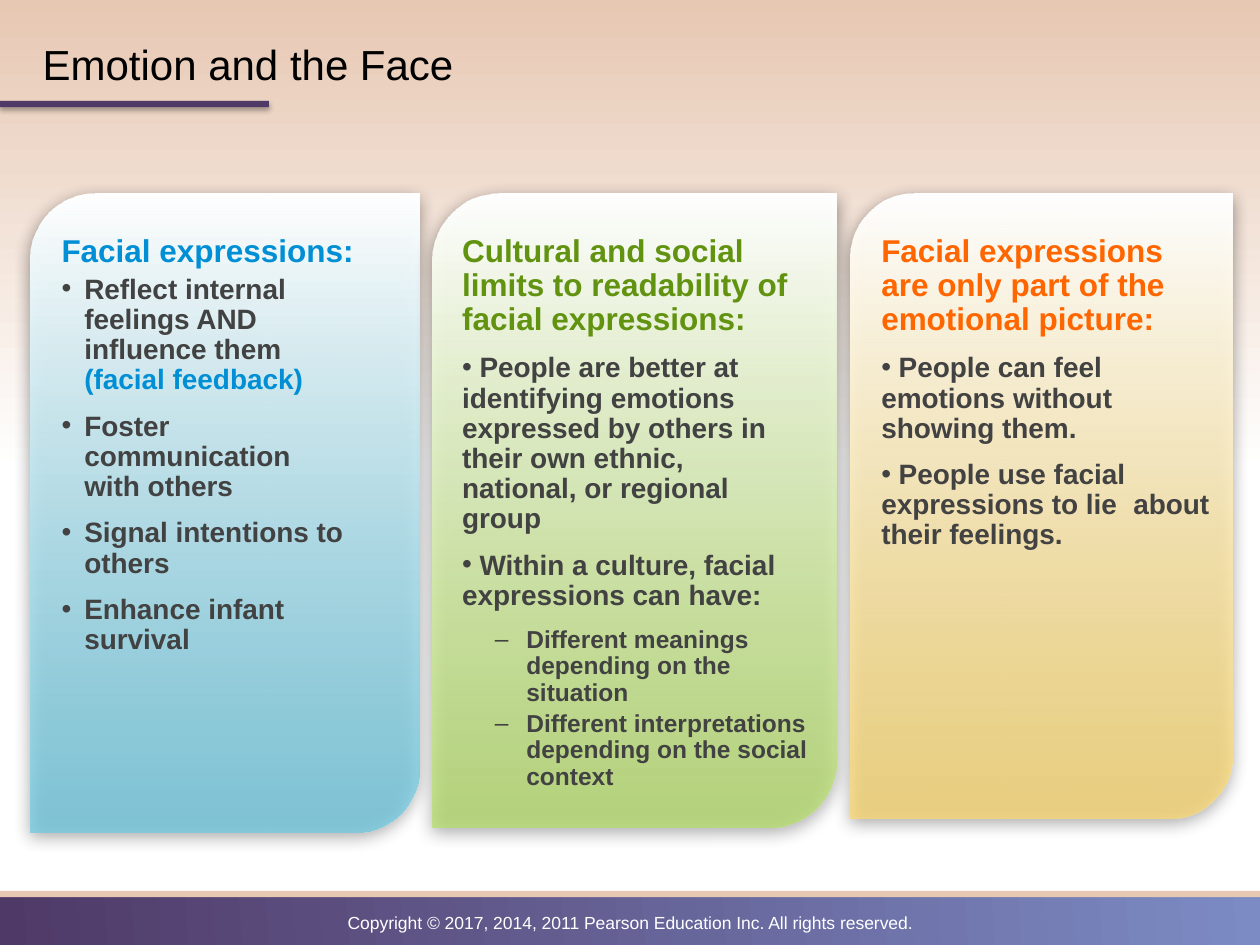
import lxml.etree
import pptx
import pptx.dml.color
import pptx.enum.shapes
import pptx.enum.text
import pptx.oxml.ns
import pptx.util

Pt = pptx.util.Pt
qn = pptx.oxml.ns.qn
SHAPES = pptx.enum.shapes.MSO_SHAPE
ALIGN = pptx.enum.text.PP_ALIGN
ANCHOR = pptx.enum.text.MSO_ANCHOR
GREY, PURPLE, SAND, WHITE, BLUE = "424242", "4F3967", "E7C8B3", "FFFFFF", "008FD4"
TABS = (8.64, 63.36)

STYLES = {
    "heading": {"size": 18, "after": 6, "tabs": TABS},
    "tight heading": {"size": 18},
    "bullet": {"size": 16, "after": 6, "bullet": "•", "tabs": TABS},
    "hanging bullet": {"size": 16, "after": 6, "bullet": "•", "margin": 13, "level": 1},
    "dash": {"size": 14, "bullet": "–", "margin": 36.7, "hang": 18, "level": 1, "tabs": TABS},
}

PANELS = [
    {
        "box": (17.3, 110.6, 222.2, 365), "text_box": (10.8, 20.4, 196.6, 316.8), "color": "6ECBE3", "opacity": 73,
        "paragraphs": [
            ("tight heading", [("Facial expressions:", BLUE)]),
            ("hanging bullet", [("Reflect internal feelings AND influence them\n", GREY), ("(facial feedback)", BLUE)]),
            ("hanging bullet", [("Foster communication\nwith others", GREY)]),
            ("hanging bullet", [("Signal intentions to others", GREY)]),
            ("hanging bullet", [("Enhance infant survival", GREY)]),
        ],
    },
    {
        "box": (247, 110.6, 231.2, 362.4), "text_box": (10, 20.4, 218.2, 353.5), "color": "B7E16A", "opacity": 72,
        "paragraphs": [
            ("heading", [("Cultural and social limits to readability of facial expressions:", "619311")]),
            ("bullet", [(" People are better at \tidentifying emotions \texpressed by others in "
                         "\ttheir own ethnic, \tnational, or regional \tgroup", GREY)]),
            ("bullet", [(" Within a culture, facial\texpressions can have:", GREY)]),
            ("dash", [("Different meanings depending on the situation", GREY)]),
            ("dash", [("Different interpretations depending on the social context", GREY)]),
        ],
    },
    {
        "box": (486, 110.6, 218.5, 357.2), "text_box": (10.5, 20.4, 206, 229.7), "color": "FFDA6E", "opacity": 72,
        "paragraphs": [
            ("heading", [("Facial expressions are only part of the emotional picture:", "FF6600")]),
            ("bullet", [(" People can feel \temotions without \tshowing them.", GREY)]),
            ("bullet", [(" People use facial \texpressions to lie \tabout their feelings.", GREY)]),
        ],
    },
]


def rgb(value):
    """Return the colour for a hex string."""
    return pptx.dml.color.RGBColor.from_string(value)


def apply_format(target, values):
    """Set each attribute of the target from a dict."""
    for name, value in values.items():
        setattr(target, name, value)


def add_element(parent, tag, **attributes):
    """Append an element to the parent and return it."""
    return lxml.etree.SubElement(parent, qn(tag), {name: str(value) for name, value in attributes.items()})


def add_color(parent, value, opacity=100):
    """Append a colour, with its opacity in percent."""
    color = add_element(parent, "a:srgbClr", val=value)
    if opacity < 100:
        add_element(color, "a:alpha", val=opacity * 1000)


def set_gradient(owner, fill, stops, angle):
    """Give the owner a linear gradient of (position, colour, opacity) stops."""
    fill.gradient()
    gradient = next(owner.element.iter(qn("a:gradFill")))
    for child in list(gradient):
        gradient.remove(child)
    stop_list = add_element(gradient, "a:gsLst")
    for position, value, opacity in stops:
        add_color(add_element(stop_list, "a:gs", pos=position * 1000), value, opacity)
    add_element(gradient, "a:lin", ang=angle * 60000, scaled=0)


def add_plain_shape(slide, kind, box, fill=None):
    """Add a shape without outline or shadow."""
    shape = slide.shapes.add_shape(kind, *map(Pt, box))
    shape.shadow.inherit = False
    shape.line.fill.background()
    if fill:
        shape.fill.solid()
        shape.fill.fore_color.rgb = rgb(fill)
    else:
        shape.fill.background()
    return shape


def add_shadow(shape, opacity, blur, distance):
    """Cast a black shadow below the shape."""
    effects = shape.element.spPr.find(qn("a:effectLst"))
    shadow = add_element(effects, "a:outerShdw", blurRad=Pt(blur), dist=Pt(distance),
                         dir=5400000, algn="t", rotWithShape=0)
    add_color(shadow, "000000", opacity)


def add_run(paragraph, text, size, color, bold=False):
    """Add text, turning newlines into line breaks."""
    for index, line in enumerate(text.split("\n")):
        if index:
            paragraph.add_line_break()
        if line:
            run = paragraph.add_run()
            run.text = line
            apply_format(run.font, {"name": "Arial", "size": Pt(size), "bold": bold})
            run.font.color.rgb = rgb(color)


def add_label(slide, box, text, size, color, alignment):
    """Add a one-line text box centred vertically."""
    frame = slide.shapes.add_textbox(*map(Pt, box)).text_frame
    apply_format(frame, {"word_wrap": True, "vertical_anchor": ANCHOR.MIDDLE})
    frame.paragraphs[0].alignment = alignment
    add_run(frame.paragraphs[0], text, size, color)


def format_paragraph(paragraph, style, first):
    """Apply bullet, tabs, indents and spacing of a style."""
    properties = paragraph._p.get_or_add_pPr()
    margin = style.get("margin", 0)
    properties.set("marL", str(Pt(margin)))
    properties.set("indent", str(-Pt(style.get("hang", margin))))
    if "bullet" in style:
        add_element(properties, "a:buFont", typeface="Arial")
        add_element(properties, "a:buChar", char=style["bullet"])
    else:
        add_element(properties, "a:buNone")
    if "tabs" in style:
        tab_list = add_element(properties, "a:tabLst")
        for position in style["tabs"]:
            add_element(tab_list, "a:tab", pos=Pt(position), algn="l")
    apply_format(paragraph, {
        "level": style.get("level", 0), "alignment": ALIGN.LEFT, "line_spacing": 0.9,
        "space_before": Pt(0 if first else 0.2 * style["size"]), "space_after": Pt(style.get("after", 0)),
    })


def add_panel(slide, box, text_box, color, opacity, paragraphs):
    """Add a gradient panel with its text placed relative to it."""
    panel = add_plain_shape(slide, SHAPES.ROUND_2_DIAG_RECTANGLE, box)
    set_gradient(panel, panel.fill, [(0, WHITE, 100), (100, color, opacity)], 90)
    add_shadow(panel, 43, 10, 3)
    left, top, width, height = text_box
    holder = add_plain_shape(slide, SHAPES.ROUNDED_RECTANGLE, (box[0] + left, box[1] + top, width, height))
    holder.adjustments[0] = 0
    frame = holder.text_frame
    apply_format(frame, {"word_wrap": True, "vertical_anchor": ANCHOR.TOP})
    for index, (style_name, runs) in enumerate(paragraphs):
        paragraph = frame.add_paragraph() if index else frame.paragraphs[0]
        style = STYLES[style_name]
        format_paragraph(paragraph, style, index == 0)
        for text, text_color in runs:
            add_run(paragraph, text, style["size"], text_color, True)


def add_header(slide, left, top):
    """Add the title and the bar below it."""
    bar = add_plain_shape(slide, SHAPES.RECTANGLE, (left, top + 57.6, 153.6, 3.6), PURPLE)
    add_shadow(bar, 35, 3.1, 1.8)
    add_label(slide, (left + 17.3, top + 15.1, 612, 42.5), "Emotion and the Face", 24, "000000", ALIGN.LEFT)


def add_footer(slide, left, top, width, height):
    """Add the footer band with the copyright line."""
    band = add_plain_shape(slide, SHAPES.RECTANGLE, (left, top, width, height))
    set_gradient(band, band.fill, [(0, PURPLE, 100), (100, "7C8BC4", 100)], 356)
    add_plain_shape(slide, SHAPES.RECTANGLE, (left, top - 0.9, width, 3.6), SAND)
    add_label(slide, (left, top + 7.2, width, 19.4),
              "Copyright © 2017, 2014, 2011 Pearson Education Inc. All rights reserved.", 10, WHITE, ALIGN.CENTER)


def main():
    """Build and save the slide."""
    presentation = pptx.Presentation()
    apply_format(presentation, {"slide_width": Pt(720), "slide_height": Pt(540)})
    slide = presentation.slides.add_slide(presentation.slide_layouts[6])
    set_gradient(slide, slide.background.fill, [(0, WHITE, 100), (50, WHITE, 100), (100, SAND, 100)], 270)
    add_footer(slide, 0, 510, 720, 30)
    add_header(slide, 0, 0)
    for panel in PANELS:
        add_panel(slide, **panel)
    presentation.save("out.pptx")


if __name__ == "__main__":
    main()
